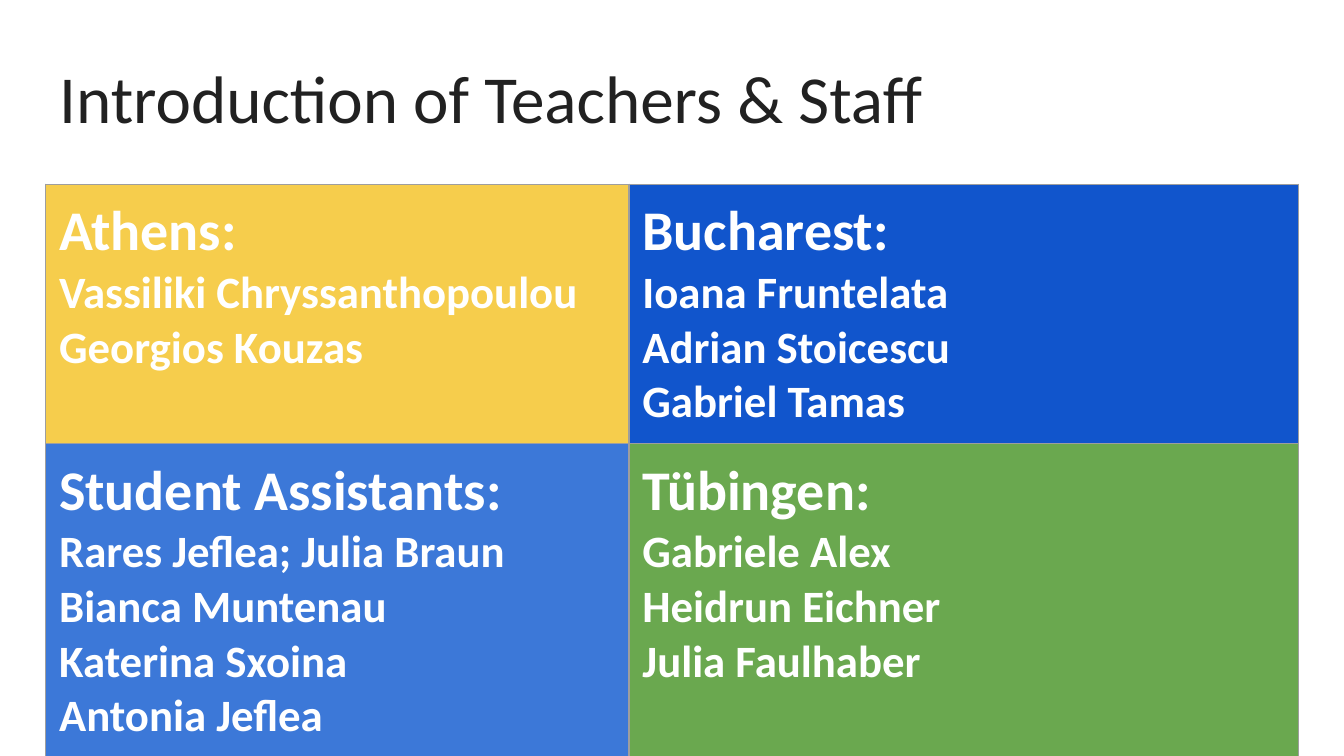
from pptx import Presentation
from pptx.dml.color import RGBColor
from pptx.enum.text import MSO_ANCHOR, MSO_AUTO_SIZE, PP_ALIGN
from pptx.oxml import parse_xml
from pptx.oxml.ns import nsdecls
from pptx.util import Inches, Pt

TITLE = "Introduction of Teachers & Staff"
TEAMS = [
    [
        ("Athens:\vVassiliki Chryssanthopoulou\vGeorgios Kouzas", "F6CD4C"),
        ("Bucharest:\nIoana Fruntelata\nAdrian Stoicescu\nGabriel Tamas", "1155CC"),
    ],
    [
        (
            "Student Assistants:\nRares Jeflea; Julia Braun\nBianca Muntenau\n"
            "Katerina Sxoina\vAntonia Jeflea",
            "3C78D8",
        ),
        ("Tübingen:\nGabriele Alex\nHeidrun Eichner\nJulia Faulhaber", "6AA84F"),
    ],
]
COLUMN_WIDTHS = [4.34, 4.98]
ROW_HEIGHTS = [0.42, 1.8]
LEFT, WIDTH, INSET = 0.34, 9.32, 0.1
TABLE_TOP, TABLE_HEIGHT = 1.37, 4.2


def paint(colour_format, colour):
    colour_format.rgb = RGBColor.from_string(colour)


def style(run, size, colour, bold):
    run.font.name = "Calibri"
    run.font.size = Pt(size)
    run.font.bold = bold
    paint(run.font.color, colour)


def set_insets(holder):
    holder.margin_left = holder.margin_right = Inches(INSET)
    holder.margin_top = holder.margin_bottom = Inches(INSET)


def add_borders(cell, colour, width):
    properties = cell._tc.get_or_add_tcPr()
    for position, side in enumerate(("lnL", "lnR", "lnT", "lnB")):
        border = parse_xml(
            f'<a:{side} {nsdecls("a")} w="{Pt(width)}"><a:solidFill>'
            f'<a:srgbClr val="{colour}"/></a:solidFill></a:{side}>'
        )
        properties.insert(position, border)


def fill_team(cell, members, colour):
    set_insets(cell)
    cell.vertical_anchor = MSO_ANCHOR.TOP
    cell.fill.solid()
    paint(cell.fill.fore_color, colour)
    add_borders(cell, "9E9E9E", 0.75)
    cell.text_frame.text = members
    place, *people = [run for line in cell.text_frame.paragraphs for run in line.runs]
    style(place, 30, "FFFFFF", True)
    for person in people:
        style(person, 24, "FFFFFF", True)


def main():
    deck = Presentation()
    deck.slide_width = Inches(10)
    deck.slide_height = deck.slide_width * 9 // 16
    slide = deck.slides.add_slide(deck.slide_layouts[5])

    title = slide.shapes.title
    title.left, title.top = Inches(LEFT), Inches(0.32)
    title.width, title.height = Inches(WIDTH), Inches(0.88)
    heading = title.text_frame
    heading.text = TITLE
    heading.word_wrap = True
    heading.auto_size = MSO_AUTO_SIZE.NONE
    heading.vertical_anchor = MSO_ANCHOR.TOP
    set_insets(heading)
    heading.paragraphs[0].alignment = PP_ALIGN.LEFT
    style(heading.paragraphs[0].runs[0], 36, "212121", False)

    frame = slide.shapes.add_table(
        len(ROW_HEIGHTS), len(COLUMN_WIDTHS),
        Inches(LEFT), Inches(TABLE_TOP), Inches(WIDTH), Inches(TABLE_HEIGHT),
    )
    staff = frame.table
    staff.first_row = staff.horz_banding = False
    for column, width in zip(staff.columns, COLUMN_WIDTHS):
        column.width = Inches(width)
    for row, height, teams in zip(staff.rows, ROW_HEIGHTS, TEAMS):
        row.height = Inches(height)
        for cell, team in zip(row.cells, teams):
            fill_team(cell, *team)
    frame.height = Inches(TABLE_HEIGHT)

    deck.save("out.pptx")


if __name__ == "__main__":
    main()
